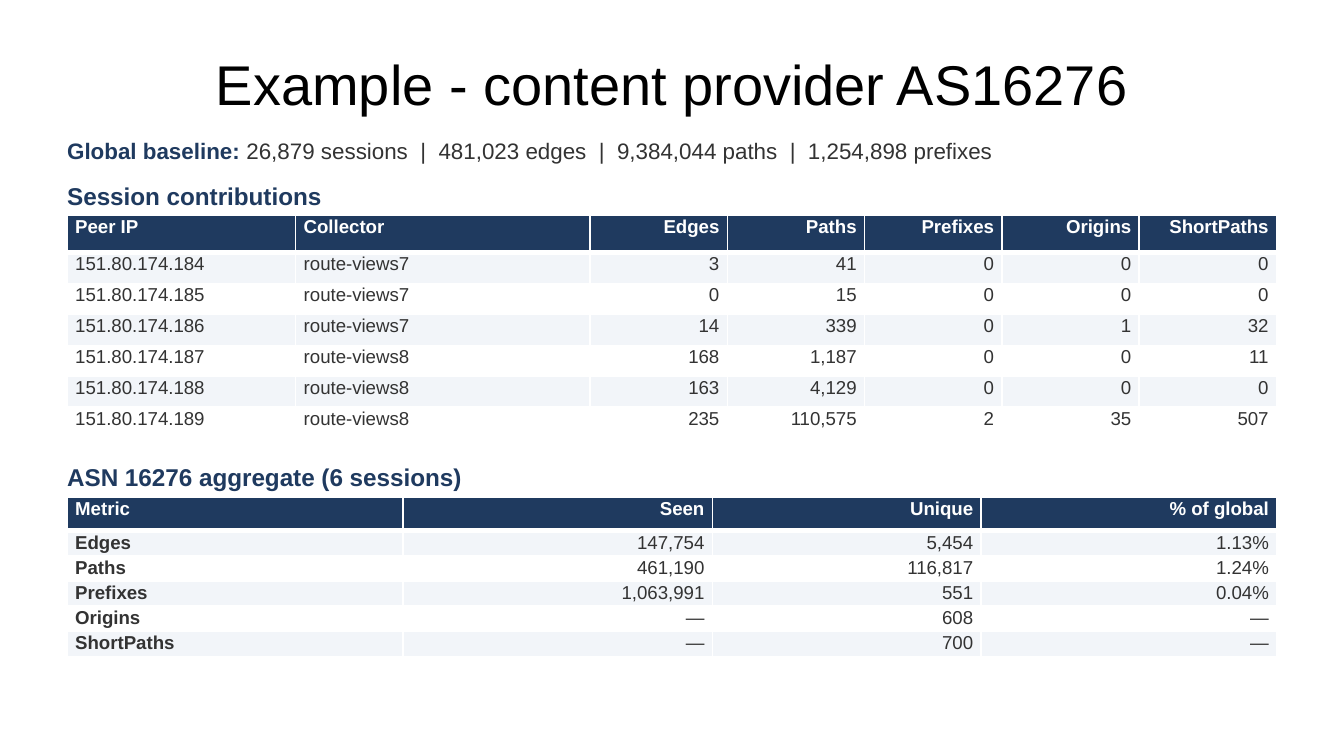
from lxml import etree
from pptx import Presentation
from pptx.dml.color import RGBColor
from pptx.enum.text import MSO_ANCHOR, PP_ALIGN
from pptx.oxml import parse_xml
from pptx.oxml.ns import nsdecls
from pptx.util import Inches, Pt

FONT = "Arial"
NAVY = RGBColor(0x1F, 0x3A, 0x5F)
BLACK = RGBColor(0x00, 0x00, 0x00)
CHARCOAL = RGBColor(0x33, 0x33, 0x33)
PALE = RGBColor(0xF2, 0xF5, 0xF9)
WHITE = RGBColor(0xFF, 0xFF, 0xFF)

TITLE = "Example - content provider AS16276"
BASELINE_LABEL = "Global baseline: "
BASELINE = "26,879 sessions  |  481,023 edges  |  9,384,044 paths  |  1,254,898 prefixes"

LEFT, WIDTH = 0.5, 9
PEER_WIDTH, COLLECTOR_WIDTH = 1.7, 2.19
COUNT_WIDTH = (WIDTH - PEER_WIDTH - COLLECTOR_WIDTH) / 5
HEADER_BORDERS = {"lnL": 1, "lnR": 1, "lnT": 1, "lnB": 3}

SECTIONS = [
    {
        "heading": "Session contributions",
        "heading_top": 1.35,
        "table_top": 1.6,
        "table_height": 1.66,
        "columns": [PEER_WIDTH, COLLECTOR_WIDTH] + [COUNT_WIDTH] * 5,
        "header_height": 0.28,
        "text_columns": 2,
        "bold_columns": 0,
        "rows": [
            ("Peer IP", "Collector", "Edges", "Paths", "Prefixes", "Origins", "ShortPaths"),
            ("151.80.174.184", "route-views7", "3", "41", "0", "0", "0"),
            ("151.80.174.185", "route-views7", "0", "15", "0", "0", "0"),
            ("151.80.174.186", "route-views7", "14", "339", "0", "1", "32"),
            ("151.80.174.187", "route-views8", "168", "1,187", "0", "0", "11"),
            ("151.80.174.188", "route-views8", "163", "4,129", "0", "0", "0"),
            ("151.80.174.189", "route-views8", "235", "110,575", "2", "35", "507"),
        ],
    },
    {
        "heading": "ASN 16276 aggregate (6 sessions)",
        "heading_top": 3.44,
        "table_top": 3.7,
        "table_height": 1.18,
        "columns": [2.5, 2.3, 2, 2.2],
        "header_height": 0.25,
        "text_columns": 1,
        "bold_columns": 1,
        "rows": [
            ("Metric", "Seen", "Unique", "% of global"),
            ("Edges", "147,754", "5,454", "1.13%"),
            ("Paths", "461,190", "116,817", "1.24%"),
            ("Prefixes", "1,063,991", "551", "0.04%"),
            ("Origins", "—", "608", "—"),
            ("ShortPaths", "—", "700", "—"),
        ],
    },
]


def style_font(font, size, color, bold=False):
    font.name = FONT
    font.size = Pt(size)
    font.color.rgb = color
    font.bold = bold


def add_line(slide, top, height, pieces, size, right=0, bottom=0):
    """Add one line of text from (text, color, bold) pieces."""
    box = slide.shapes.add_textbox(Inches(LEFT), Inches(top), Inches(WIDTH), Inches(height))
    frame = box.text_frame
    frame.word_wrap = True
    frame.margin_left = frame.margin_top = 0
    frame.margin_right, frame.margin_bottom = Inches(right), Inches(bottom)
    for text, color, bold in pieces:
        run = frame.paragraphs[0].add_run()
        run.text = text
        style_font(run.font, size, color, bold)


def fill_cell(cell, text, fill, color, bold, align):
    cell.margin_left = cell.margin_right = Inches(0.06)
    cell.margin_top = cell.margin_bottom = Inches(0.01)
    cell.fill.solid()
    cell.fill.fore_color.rgb = fill
    cell.text_frame.text = text
    paragraph = cell.text_frame.paragraphs[0]
    paragraph.alignment = align
    style_font(paragraph.runs[0].font, 10, color, bold)


def border_header(cell):
    properties = cell._tc.get_or_add_tcPr()
    for position, (side, width) in enumerate(HEADER_BORDERS.items()):
        line = parse_xml(f'<a:{side} {nsdecls("a")} w="{Pt(width)}"/>')
        fill = etree.SubElement(line, line.tag.replace(side, "solidFill"))
        etree.SubElement(fill, line.tag.replace(side, "srgbClr"), val=str(WHITE))
        properties.insert(position, line)


def add_section(slide, section):
    add_line(slide, section["heading_top"], 0.24, [(section["heading"], NAVY, True)],
             13, right=0.1, bottom=0.05)
    rows, columns = section["rows"], section["columns"]
    header_height, table_height = section["header_height"], section["table_height"]
    row_height = (table_height - header_height) / (len(rows) - 1)
    table = slide.shapes.add_table(
        len(rows), len(columns), Inches(LEFT), Inches(section["table_top"]),
        Inches(WIDTH), Inches(table_height)).table
    for column, width in zip(table.columns, columns):
        column.width = Inches(width)
    for r, values in enumerate(rows):
        header = r == 0
        table.rows[r].height = Inches(header_height if header else row_height)
        fill = NAVY if header else (PALE if r % 2 else WHITE)
        for c, value in enumerate(values):
            cell = table.cell(r, c)
            fill_cell(cell, value, fill,
                      WHITE if header else CHARCOAL,
                      header or c < section["bold_columns"],
                      PP_ALIGN.LEFT if c < section["text_columns"] else PP_ALIGN.RIGHT)
            if header:
                border_header(cell)


def main():
    deck = Presentation()
    deck.slide_width = Inches(10)
    deck.slide_height = Inches(10 * 9 / 16)
    slide = deck.slides.add_slide(deck.slide_layouts[5])

    title = slide.shapes.title
    title.left, title.top = Inches(LEFT), Inches(0.23)
    title.width, title.height = Inches(WIDTH), Inches(0.77)
    title.text_frame.text = TITLE
    title.text_frame.vertical_anchor = MSO_ANCHOR.MIDDLE
    heading = title.text_frame.paragraphs[0]
    heading.alignment = PP_ALIGN.CENTER
    style_font(heading.runs[0].font, 30, BLACK)

    add_line(slide, 1.02, 0.28,
             [(BASELINE_LABEL, NAVY, True), (BASELINE, CHARCOAL, False)], 12)
    for section in SECTIONS:
        add_section(slide, section)
    deck.save("out.pptx")


if __name__ == "__main__":
    main()
